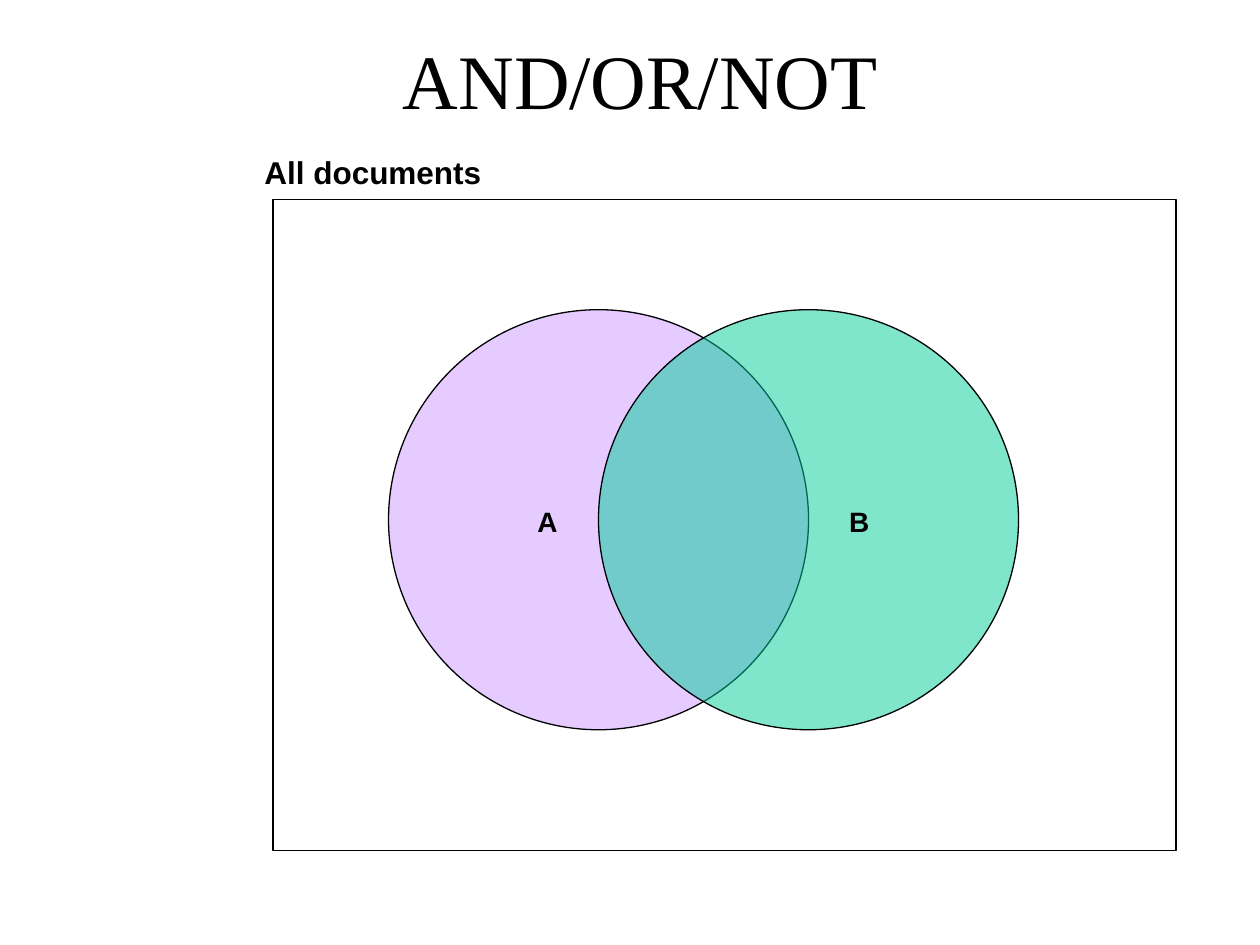
import pptx
import pptx.dml.color
import pptx.enum.shapes
import pptx.enum.text
import pptx.oxml
import pptx.oxml.ns
import pptx.util

ALIGN = pptx.enum.text.PP_ALIGN
ANCHOR = pptx.enum.text.MSO_ANCHOR
AUTO_SIZE = pptx.enum.text.MSO_AUTO_SIZE
SHAPE = pptx.enum.shapes.MSO_SHAPE


def color(hex_string):
    return pptx.dml.color.RGBColor.from_string(hex_string)


class VennSlide:
    cells_per_inch = 12
    ink = "000000"
    label_font = "Arial"
    title_font = "Times New Roman"
    line_width = 0.75

    def __init__(self, presentation):
        self.slide = presentation.slides.add_slide(presentation.slide_layouts[6])

    def cells(self, *counts):
        return [pptx.util.Inches(count / self.cells_per_inch) for count in counts]

    def text(self, words, column, row, columns, rows, size, font, bold=False,
             wrap=False, align=ALIGN.LEFT, anchor=ANCHOR.TOP):
        box = self.slide.shapes.add_textbox(*self.cells(column, row, columns, rows))
        frame = box.text_frame
        frame.word_wrap = wrap
        frame.auto_size = AUTO_SIZE.NONE if wrap else AUTO_SIZE.SHAPE_TO_FIT_TEXT
        frame.vertical_anchor = anchor
        paragraph = frame.paragraphs[0]
        paragraph.alignment = align
        run = paragraph.add_run()
        run.text = words
        run.font.name = font
        run.font.size = pptx.util.Pt(size)
        run.font.bold = bold
        run.font.color.rgb = color(self.ink)

    def title(self, words, column, row, columns, rows):
        self.text(words, column, row, columns, rows, 44, self.title_font,
                  wrap=True, align=ALIGN.CENTER, anchor=ANCHOR.MIDDLE)

    def label(self, words, column, row, columns, rows, size):
        self.text(words, column, row, columns, rows, size, self.label_font, bold=True)

    def outline(self, kind, column, row, columns, rows):
        shape = self.slide.shapes.add_shape(kind, *self.cells(column, row, columns, rows))
        shape.shadow.inherit = False
        shape.fill.background()
        shape.line.color.rgb = color(self.ink)
        shape.line.width = pptx.util.Pt(self.line_width)
        return shape

    def circle(self, column, row, diameter, fill, opacity):
        shape = self.outline(SHAPE.OVAL, column, row, diameter, diameter)
        shape.fill.solid()
        shape.fill.fore_color.rgb = color(fill)
        fill_color = shape.element.spPr.find(
            pptx.oxml.ns.qn("a:solidFill")).find(pptx.oxml.ns.qn("a:srgbClr"))
        fill_color.append(pptx.oxml.parse_xml(
            f'<a:alpha {pptx.oxml.ns.nsdecls("a")} val="{opacity * 1000}"/>'))


def main():
    presentation = pptx.Presentation()
    presentation.slide_width = pptx.util.Inches(10)
    presentation.slide_height = pptx.util.Inches(7.5)

    venn = VennSlide(presentation)
    venn.title("AND/OR/NOT", 10, 0, 102, 15)
    venn.outline(SHAPE.RECTANGLE, 26, 19, 86, 62)

    diameter = 40
    first_column = 37
    for index, fill in enumerate(("CC99FF", "00CC99")):
        venn.circle(first_column + index * diameter / 2, 29.5, diameter, fill, 50)

    for words, column in (("A", 50), ("B", 79.7)):
        venn.label(words, column, 47.5, 4.3, 4.4, 16)
    venn.label("All documents", 24, 14, 23.2, 4.8, 18)

    presentation.save("out.pptx")


if __name__ == "__main__":
    main()
